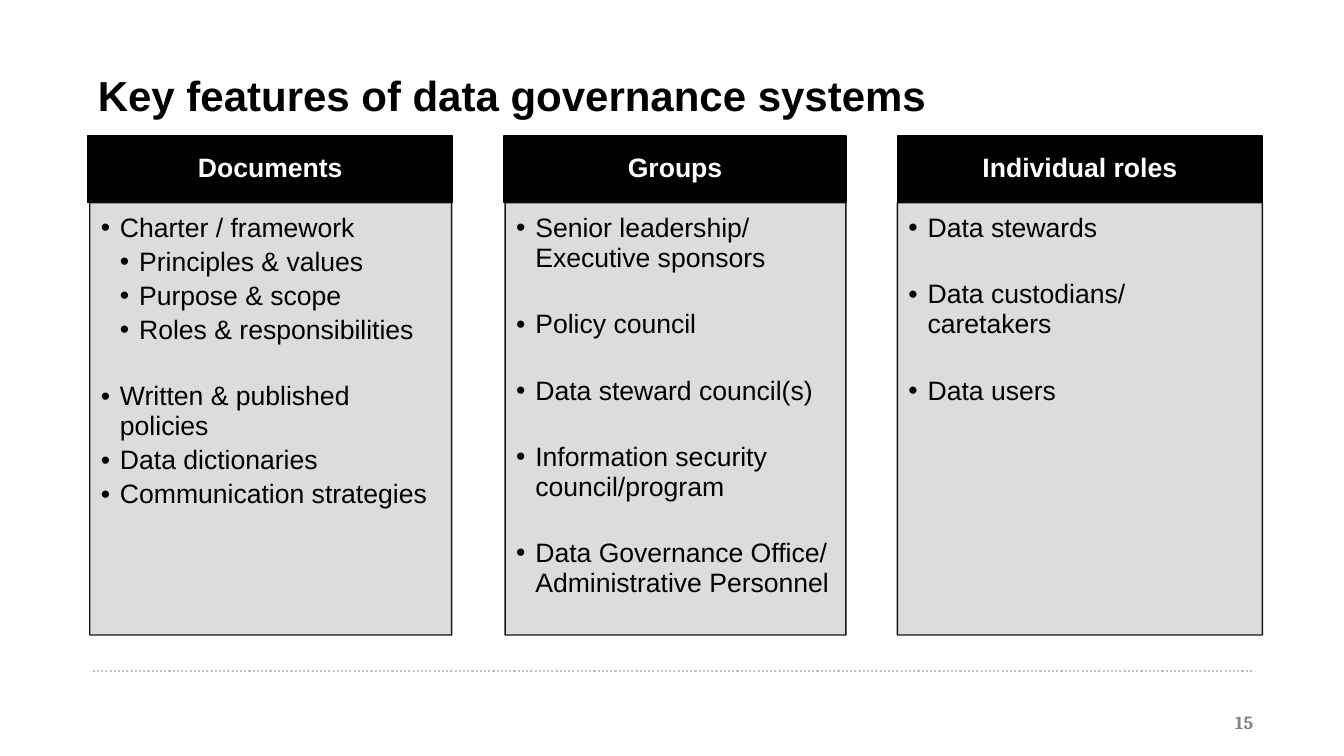
from lxml import etree
from pptx import Presentation
from pptx.dml.color import RGBColor
from pptx.enum import dml, shapes, text
from pptx.oxml.ns import qn
from pptx.util import Inches, Pt

BLACK = RGBColor(0, 0, 0)
WHITE = RGBColor(0xFF, 0xFF, 0xFF)
PANEL_GRAY = RGBColor(0xD9, 0xD9, 0xD9)
RULE_GRAY = RGBColor(0xC0, 0xC0, 0xC0)
NUMBER_GRAY = RGBColor(0x82, 0x83, 0x83)

HEADER_TOP, HEADER_HEIGHT = 1.35, 0.66
PANEL_TOP, PANEL_HEIGHT = HEADER_TOP + HEADER_HEIGHT, 4.29
INDENT = 0.19
GROUP_GAP = Pt(23)

# Heading, header left and width, panel left and width,
# then (item, level, starts a new group)
columns = [
    ("Documents", 0.87, 3.62, 0.89, 3.59, [
        ("Charter / framework", 1, False),
        ("Principles & values", 2, False),
        ("Purpose & scope", 2, False),
        ("Roles & responsibilities", 2, False),
        ("Written & published policies", 1, True),
        ("Data dictionaries", 1, False),
        ("Communication strategies", 1, False),
    ]),
    ("Groups", 5, 3.39, 5.01, 3.38, [
        ("Senior leadership/ Executive sponsors", 1, False),
        ("Policy council", 1, True),
        ("Data steward council(s)", 1, True),
        ("Information security council/program", 1, True),
        ("Data Governance Office/ Administrative Personnel", 1, True),
    ]),
    ("Individual roles", 8.9, 3.62, 8.9, 3.62, [
        ("Data stewards", 1, False),
        ("Data custodians/ caretakers", 1, True),
        ("Data users", 1, True),
    ]),
]

prs = Presentation()
prs.slide_width, prs.slide_height = Inches(13.33), Inches(7.5)
slide = prs.slides.add_slide(prs.slide_layouts[5])


def add_run(paragraph, words, size, color, bold=False, font="Arial"):
    run = paragraph.add_run()
    run.text = words
    run.font.name, run.font.size, run.font.bold = font, Pt(size), bold
    run.font.color.rgb = color


def add_box(left, top, width, height, fill, insets):
    """Add an outlined rectangle with left, top, right and bottom insets."""
    box = slide.shapes.add_shape(
        shapes.MSO_SHAPE.RECTANGLE,
        Inches(left), Inches(top), Inches(width), Inches(height))
    box.shadow.inherit = False
    box.fill.solid()
    box.fill.fore_color.rgb = fill
    box.line.color.rgb = BLACK
    box.line.width = Pt(1)
    frame = box.text_frame
    frame.word_wrap = True
    (frame.margin_left, frame.margin_top,
     frame.margin_right, frame.margin_bottom) = map(Inches, insets)
    return box


# Title
title = slide.shapes.title
title.left, title.top = Inches(0.87), Inches(0.74)
title.width, title.height = Inches(11.65), Inches(0.9)
title_frame = title.text_frame
title_frame.vertical_anchor = text.MSO_ANCHOR.TOP
title_frame.auto_size = text.MSO_AUTO_SIZE.NONE
title_line = title_frame.paragraphs[0]
title_line.alignment = text.PP_ALIGN.LEFT
title_line.line_spacing = 0.8
add_run(title_line, "Key features of data governance systems", 30, BLACK, True)

# Three columns
for heading, header_left, header_width, panel_left, panel_width, items in columns:
    header = add_box(header_left, HEADER_TOP, header_width, HEADER_HEIGHT,
                     BLACK, (0.15, 0.08, 0.15, 0.08))
    header.text_frame.vertical_anchor = text.MSO_ANCHOR.MIDDLE
    heading_line = header.text_frame.paragraphs[0]
    heading_line.alignment = text.PP_ALIGN.CENTER
    heading_line.line_spacing = 0.9
    add_run(heading_line, heading, 19, WHITE, True)

    panel = add_box(panel_left, PANEL_TOP, panel_width, PANEL_HEIGHT,
                    PANEL_GRAY, (0.11, 0.11, 0.15, 0.17))
    for color in panel.fill._xPr.iter(qn("a:srgbClr")):
        etree.SubElement(color, qn("a:alpha"), val="90000")
    panel.text_frame.vertical_anchor = text.MSO_ANCHOR.TOP
    for index, (item, level, new_group) in enumerate(items):
        bullet_line = (panel.text_frame.add_paragraph() if index
                       else panel.text_frame.paragraphs[0])
        bullet_line.alignment = text.PP_ALIGN.LEFT
        bullet_line.level = level - 1
        bullet_line.line_spacing = 0.94
        bullet_line.space_after = Pt(2.85)
        if new_group:
            bullet_line.space_before = GROUP_GAP
        properties = bullet_line._p.get_or_add_pPr()
        properties.set("marL", str(Inches(INDENT * level)))
        properties.set("indent", str(-Inches(INDENT)))
        etree.SubElement(properties, qn("a:buFont"), typeface="Arial")
        etree.SubElement(properties, qn("a:buChar"), char="•")
        add_run(bullet_line, item, 19, BLACK)

# Footer
footer_rule = slide.shapes.add_connector(
    shapes.MSO_CONNECTOR.STRAIGHT,
    Inches(0.92), Inches(6.66), Inches(12.42), Inches(6.66))
footer_rule.line.color.rgb = RULE_GRAY
footer_rule.line.width = Pt(1.5)
footer_rule.line.dash_style = dml.MSO_LINE.ROUND_DOT
etree.SubElement(footer_rule._element.spPr, qn("a:effectLst"))

page_number = slide.shapes.add_textbox(
    Inches(9.56), Inches(6.96), Inches(3), Inches(0.4)).text_frame
page_number.word_wrap = True
page_number.vertical_anchor = text.MSO_ANCHOR.MIDDLE
page_number.margin_left = page_number.margin_right = Inches(0.13)
page_number.margin_top = page_number.margin_bottom = Inches(0.07)
page_number.paragraphs[0].alignment = text.PP_ALIGN.RIGHT
add_run(page_number.paragraphs[0], "15", 13.3, NUMBER_GRAY, True, "Cambria")

prs.save("out.pptx")
